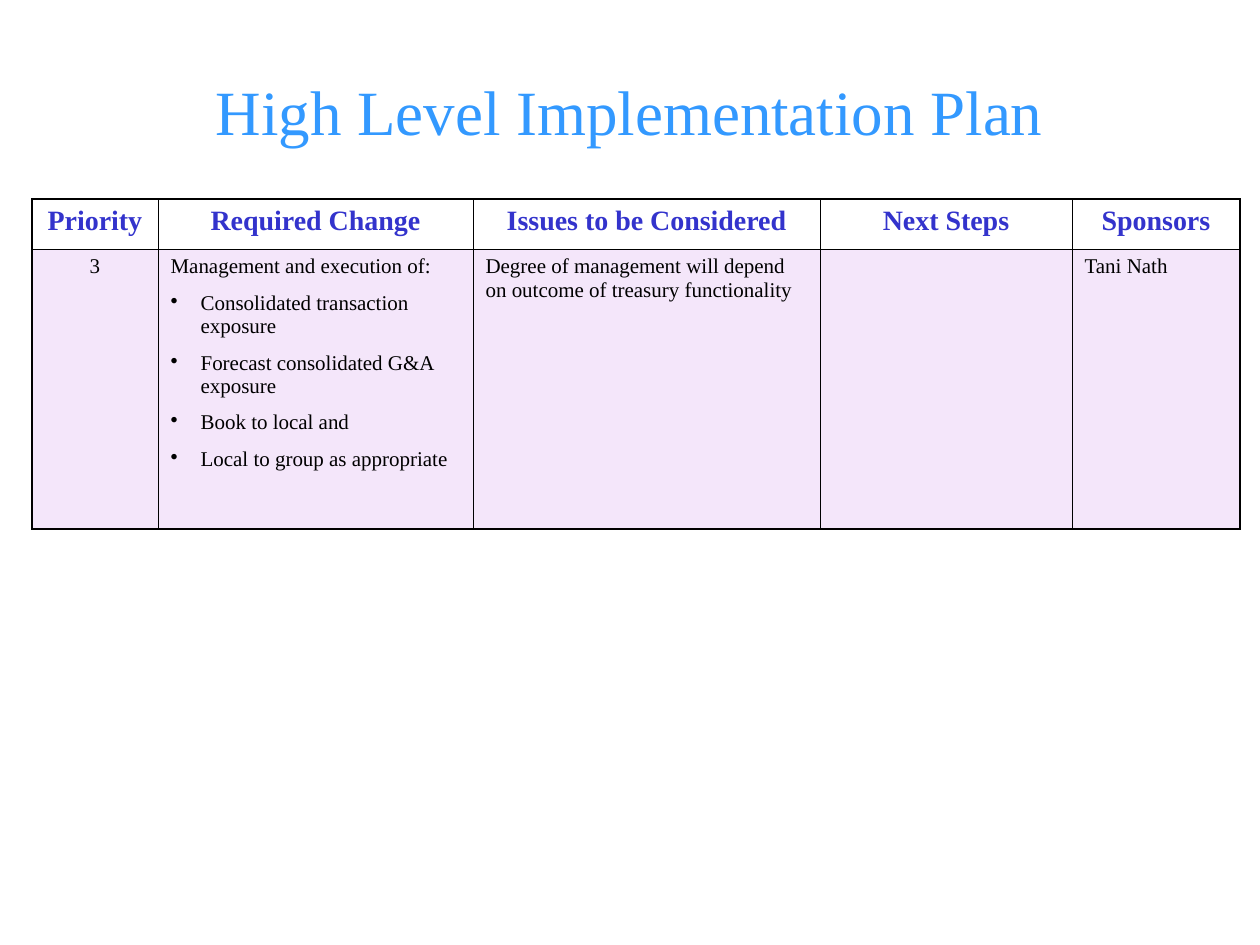
import lxml.etree
import pptx
import pptx.dml.color
import pptx.enum.text
import pptx.oxml.ns
import pptx.util

SCALE = 914400 / 126
COLOURS = {
    "title": "3399FF",
    "heading": "3333CC",
    "body": "000000",
    "border": "000000",
    "row": "F4E6FA",
}
ALIGN = pptx.enum.text.PP_ALIGN
ANCHOR = pptx.enum.text.MSO_ANCHOR


def px(length):
    return pptx.util.Emu(round(length * SCALE))


def rgb(name):
    return pptx.dml.color.RGBColor.from_string(COLOURS[name])


def apply(target, values):
    for attribute, value in values.items():
        setattr(target, attribute, value)


class PlanSlide:
    font = "Times New Roman"
    bullet_indent = 30
    outer_line = 1.08
    inner_line = 0.45

    def __init__(self, presentation):
        self.slide = presentation.slides.add_slide(presentation.slide_layouts[5])

    def add_text(self, paragraph, text, size, colour, bold=False, **layout):
        apply(paragraph, layout)
        run = paragraph.add_run()
        run.text = text
        apply(run.font, {"name": self.font, "size": pptx.util.Pt(size), "bold": bold})
        run.font.color.rgb = rgb(colour)

    def title(self, text, left, top, width, height):
        heading = self.slide.shapes.title
        apply(heading, {"left": px(left), "top": px(top),
                        "width": px(width), "height": px(height)})
        apply(heading.text_frame, {"vertical_anchor": ANCHOR.MIDDLE, "word_wrap": True,
                                   "auto_size": pptx.enum.text.MSO_AUTO_SIZE.NONE})
        self.add_text(heading.text_frame.paragraphs[0], text, 36, "title",
                      alignment=ALIGN.CENTER)

    def bullet(self, paragraph):
        properties = paragraph._p.get_or_add_pPr()
        indent = px(self.bullet_indent)
        properties.set("marL", str(indent))
        properties.set("indent", str(-indent))
        mark = lxml.etree.SubElement(properties, pptx.oxml.ns.qn("a:buChar"))
        mark.set("char", "•")

    def borders(self, cell, outer_sides):
        properties = cell._tc.get_or_add_tcPr()
        for position, side in enumerate("LRTB"):
            points = self.outer_line if side in outer_sides else self.inner_line
            line = lxml.etree.Element(pptx.oxml.ns.qn(f"a:ln{side}"))
            line.set("w", str(pptx.util.Pt(points)))
            fill = lxml.etree.SubElement(line, pptx.oxml.ns.qn("a:solidFill"))
            colour = lxml.etree.SubElement(fill, pptx.oxml.ns.qn("a:srgbClr"))
            colour.set("val", COLOURS["border"])
            properties.insert(position, line)

    def table(self, left, top, widths, heights):
        plan = self.slide.shapes.add_table(
            len(heights), len(widths), px(left), px(top),
            px(sum(widths)), px(sum(heights))).table
        apply(plan, {"first_row": False, "horz_banding": False})
        for column, width in zip(plan.columns, widths):
            column.width = px(width)
        for row, height in zip(plan.rows, heights):
            row.height = px(height)
        last_row, last_column = len(heights) - 1, len(widths) - 1
        for r, row in enumerate(plan.rows):
            for c, cell in enumerate(row.cells):
                cell.vertical_anchor = ANCHOR.TOP
                if r == 0:
                    cell.fill.background()
                else:
                    cell.fill.solid()
                    cell.fill.fore_color.rgb = rgb("row")
                edges = {"L": c == 0, "R": c == last_column,
                         "T": r == 0, "B": r == last_row}
                self.borders(cell, [side for side, outer in edges.items() if outer])
        return plan

    def entry(self, cell, lines, size, colour, space, bold=False, alignment=ALIGN.LEFT):
        frame = cell.text_frame
        for index, line in enumerate(lines):
            paragraph = frame.add_paragraph() if index else frame.paragraphs[0]
            self.add_text(paragraph, line, size, colour, bold, alignment=alignment,
                          space_before=pptx.util.Pt(space))
            if index:
                self.bullet(paragraph)


def main():
    presentation = pptx.Presentation()
    apply(presentation, {"slide_width": px(1260), "slide_height": px(945)})
    page = PlanSlide(presentation)
    page.title("High Level Implementation Plan", 94, 32, 1071, 157)

    plan = page.table(32, 199, [126, 315, 347, 252, 168], [50, 280])
    headings = ["Priority", "Required Change", "Issues to be Considered",
                "Next Steps", "Sponsors"]
    for column, heading in enumerate(headings):
        page.entry(plan.cell(0, column), [heading], 16, "heading", 4, True, ALIGN.CENTER)

    required_change = [
        "Management and execution of:",
        "Consolidated transaction exposure",
        "Forecast consolidated G&A exposure",
        "Book to local and",
        "Local to group as appropriate",
    ]
    issues = ["Degree of management will depend on outcome of treasury functionality"]
    details = [
        (["3"], 7.5, ALIGN.CENTER),
        (required_change, 7.5, ALIGN.LEFT),
        (issues, 3, ALIGN.LEFT),
        ([], 3, ALIGN.LEFT),
        (["Tani Nath"], 3, ALIGN.LEFT),
    ]
    for column, (lines, space, alignment) in enumerate(details):
        page.entry(plan.cell(1, column), lines, 12, "body", space, alignment=alignment)

    presentation.save("out.pptx")


if __name__ == "__main__":
    main()
